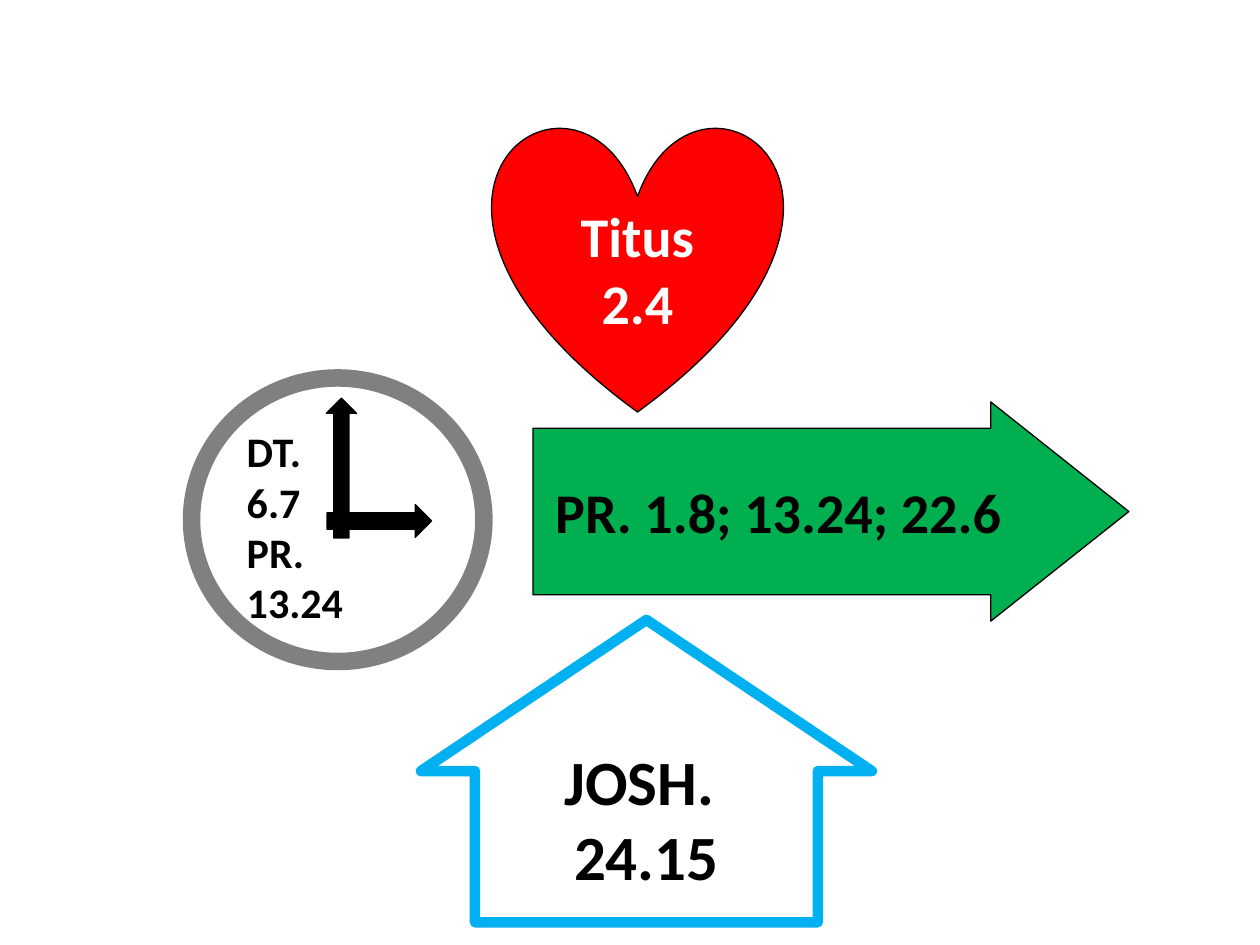
from pptx import Presentation
from pptx.dml.color import RGBColor
from pptx.enum.shapes import MSO_SHAPE as Shape
from pptx.enum.text import MSO_ANCHOR as Anchor, PP_ALIGN as Align
from pptx.util import Inches, Pt

BLACK, WHITE = "000000", "FFFFFF"


def color(value):
    return RGBColor.from_string(value)


def add_figure(shapes, kind, box, fill, line=BLACK, width=0.75, adjust=()):
    sp = shapes.add_shape(kind, *map(Inches, box))
    sp.shadow.inherit = False
    sp.fill.solid()
    sp.fill.fore_color.rgb = color(fill)
    sp.line.color.rgb = color(line)
    sp.line.width = Pt(width)
    for i, value in enumerate(adjust):
        sp.adjustments[i] = value
    return sp


def write(sp, text, size, font_color=BLACK, align=Align.CENTER,
          anchor=Anchor.MIDDLE, **margins):
    """Fill a shape with bold text; margins are inches by side."""
    tf = sp.text_frame
    tf.word_wrap = True
    tf.vertical_anchor = anchor
    for side, value in margins.items():
        setattr(tf, f"margin_{side}", Inches(value))
    tf.text = text
    for p in tf.paragraphs:
        p.alignment = align
        for r in p.runs:
            r.font.name = "Calibri"
            r.font.size = Pt(size)
            r.font.bold = True
            r.font.color.rgb = color(font_color)


def add_clock(slide):
    clock = slide.shapes.add_group_shape().shapes
    face = add_figure(clock, Shape.OVAL, (1.52, 3, 2.32, 2.25),
                      WHITE, "808080", 10)
    write(face, "DT.\v6.7\nPR.\n13.24", 24, align=Align.LEFT,
          anchor=Anchor.TOP, top=0.05)
    add_figure(clock, Shape.UP_ARROW, (2.59, 3.16, 0.24, 1.11), BLACK)
    hour_hand = add_figure(clock, Shape.UP_ARROW, (2.88, 3.72, 0.26, 0.83), BLACK)
    hour_hand.rotation = 90


def main():
    prs = Presentation()
    prs.slide_width, prs.slide_height = Inches(10), Inches(7.5)
    slide = prs.slides.add_slide(prs.slide_layouts[6])
    shapes = slide.shapes

    heart = add_figure(shapes, Shape.HEART, (3.91, 0.99, 2.3, 2.28), "FF0000")
    write(heart, "Titus\v2.4", 32, WHITE, anchor=Anchor.TOP, top=0.04, bottom=0)

    add_clock(slide)

    arrow = add_figure(shapes, Shape.RIGHT_ARROW, (4.23, 3.19, 4.73, 1.74),
                       "00B050", adjust=(0.76, 0.63))
    write(arrow, "PR. 1.8; 13.24; 22.6", 32)

    house = add_figure(shapes, Shape.UP_ARROW, (3.34, 4.92, 3.58, 2.4),
                       WHITE, "00B0F0", 6, adjust=(0.76, 0.5))
    write(house, "JOSH. \n24.15", 36, anchor=Anchor.BOTTOM, bottom=0.23)

    prs.save("out.pptx")


if __name__ == "__main__":
    main()
